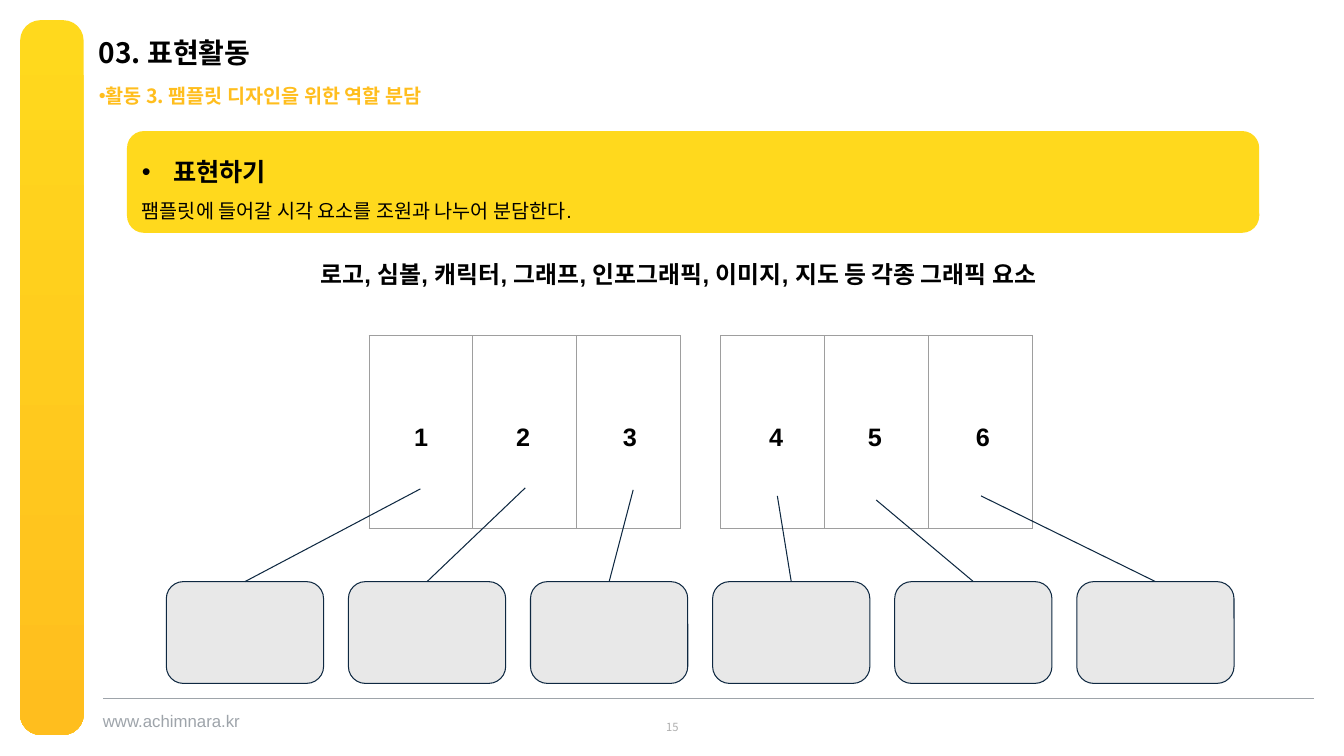
from dataclasses import dataclass

import pptx
import pptx.dml.color
import pptx.enum.shapes
import pptx.enum.text
import pptx.oxml
import pptx.oxml.ns
import pptx.util
from pptx.util import Inches

KOREAN = "Noto Sans CJK KR"
LATIN = "Arial"
YELLOW, AMBER, NAVY, BLACK = "FFD91D", "FFBE1E", "0E2841", "000000"
ALIGN = pptx.enum.text.PP_ALIGN
ANCHOR = pptx.enum.text.MSO_ANCHOR
ROUNDED = pptx.enum.shapes.MSO_SHAPE.ROUNDED_RECTANGLE


@dataclass
class Line:
    text: str
    size: float
    font: str = LATIN
    color: str = BLACK
    bold: bool = True
    spacing: float = 1.0
    bullet: bool = False
    indent: float = 0
    align: ALIGN = ALIGN.LEFT


@dataclass
class Label:
    left: float
    top: float
    width: float
    height: float
    line: Line
    margins: tuple = (0, 0)
    anchor: ANCHOR = ANCHOR.TOP


@dataclass
class Role:
    number: int
    number_left: float
    start_x: float
    start_y: float


TABLE_LEFTS = (3.66, 7.15)
COLUMN_WIDTH, TABLE_TOP, TABLE_HEIGHT = 1.03, 3.33, 1.91
BOX_LEFT, BOX_TOP, BOX_WIDTH, BOX_HEIGHT, BOX_STEP = 1.65, 5.77, 1.56, 1.01, 1.806

ROLES = [
    Role(1, 4.01, 4.17, 4.85),
    Role(2, 5.02, 5.21, 4.84),
    Role(3, 6.08, 6.28, 4.86),
    Role(4, 7.53, 7.71, 4.92),
    Role(5, 8.51, 8.69, 4.96),
    Role(6, 9.58, 9.73, 4.92),
]

LABELS = [
    Label(1.02, 7.05, 1.5, 0.2, Line("www.achimnara.kr", 12, color="9EA4AA", bold=False)),
    Label(0.98, 0.79, 7.87, 0.28,
          Line("활동 3. 팸플릿 디자인을 위한 역할 분담", 14, KOREAN, AMBER, spacing=1.2, bullet=True)),
    Label(0.98, 0.39, 7.87, 0.28, Line("03. 표현활동", 20, KOREAN, spacing=0.9)),
    Label(5.17, 7.13, 3, 0.17,
          Line("15", 8, KOREAN, "AEAEAE", bold=False, align=ALIGN.CENTER), (0.1, 0.05), ANCHOR.MIDDLE),
    Label(3.08, 2.43, 8.23, 0.92,
          Line("로고, 심볼, 캐릭터, 그래프, 인포그래픽, 이미지, 지도 등 각종 그래픽 요소", 17, spacing=1.15),
          (0.1, 0.1)),
]

BANNER = [
    Line("표현하기", 18, spacing=1.5, bullet=True, indent=0.31),
    Line("팸플릿에 들어갈 시각 요소를 조원과 나누어 분담한다.", 14, bold=False, spacing=1.5),
]


def rgb(color: str) -> pptx.dml.color.RGBColor:
    return pptx.dml.color.RGBColor.from_string(color)


def xml_element(markup: str):
    """Parse one DrawingML element, given without its namespace declaration."""
    head, mark, tail = markup.partition(">")
    slash = "/" if head.endswith("/") else ""
    declared = f"{head.removesuffix('/')} {pptx.oxml.ns.nsdecls('a')}{slash}"
    return pptx.oxml.parse_xml(declared + mark + tail)


def write_line(para, line: Line) -> None:
    if line.bullet:
        properties = para._p.get_or_add_pPr()
        properties.set("marL", str(Inches(line.indent)))
        properties.set("indent", str(Inches(-line.indent)))
        for markup in (f'<a:buClr><a:srgbClr val="{line.color}"/></a:buClr>',
                       f'<a:buFont typeface="{LATIN}"/>', '<a:buChar char="•"/>'):
            properties.append(xml_element(markup))
    para.alignment = line.align
    para.line_spacing = line.spacing
    span = para.add_run()
    span.text = line.text
    span.font.size = pptx.util.Pt(line.size)
    span.font.bold = line.bold
    span.font.color.rgb = rgb(line.color)
    span.font.name = line.font
    span._r.get_or_add_rPr().append(xml_element(f'<a:ea typeface="{KOREAN}"/>'))


def set_frame(frame, margins: tuple, anchor: ANCHOR) -> None:
    frame.word_wrap = True
    frame.margin_left = frame.margin_right = Inches(margins[0])
    frame.margin_top = frame.margin_bottom = Inches(margins[1])
    frame.vertical_anchor = anchor


def add_label(page, label: Label) -> None:
    box = page.shapes.add_textbox(Inches(label.left), Inches(label.top),
                                  Inches(label.width), Inches(label.height))
    set_frame(box.text_frame, label.margins, label.anchor)
    write_line(box.text_frame.paragraphs[0], label.line)


def add_rounded(page, left: float, top: float, width: float, height: float,
                fill: str, outline: str = "", corner: float = 0.167):
    shape = page.shapes.add_shape(ROUNDED, Inches(left), Inches(top), Inches(width), Inches(height))
    shape.shadow.inherit = False
    shape.adjustments[0] = corner
    shape.fill.solid()
    shape.fill.fore_color.rgb = rgb(fill)
    if outline:
        shape.line.color.rgb = rgb(outline)
        shape.line.width = pptx.util.Pt(0.75)
    else:
        shape.line.fill.background()
    return shape


def add_rule(page, start: tuple, end: tuple, color: str) -> None:
    rule = page.shapes.add_connector(pptx.enum.shapes.MSO_CONNECTOR.STRAIGHT,
                                     *(Inches(value) for value in start + end))
    rule.line.color.rgb = rgb(color)
    rule.line.width = pptx.util.Pt(0.75)
    rule._element.spPr.append(xml_element("<a:effectLst/>"))


def add_leaflet(page, left: float) -> None:
    """Draw one side of the three-fold pamphlet as an empty table."""
    table = page.shapes.add_table(1, 3, Inches(left), Inches(TABLE_TOP),
                                  Inches(3 * COLUMN_WIDTH), Inches(TABLE_HEIGHT)).table
    table.first_row = table.horz_banding = False
    for column in table.columns:
        column.width = Inches(COLUMN_WIDTH)
    for cell in table.iter_cells():
        properties = cell._tc.get_or_add_tcPr()
        for side in "LRTB":
            properties.append(xml_element(
                f'<a:ln{side} w="9525"><a:solidFill><a:srgbClr val="9E9E9E"/></a:solidFill></a:ln{side}>'))
        cell.fill.background()


def add_side_bar(page) -> None:
    bar = add_rounded(page, 0.2, 0.2, 0.63, 7.09, YELLOW, corner=0.321)
    bar.fill.gradient()
    bar.fill.gradient_angle = 270
    for stop, color in zip(bar.fill.gradient_stops, (YELLOW, AMBER)):
        stop.color.rgb = rgb(color)


def add_banner(page) -> None:
    frame = add_rounded(page, 1.26, 1.3, 11.23, 1.01, YELLOW).text_frame
    set_frame(frame, (0.1, 0.05), ANCHOR.MIDDLE)
    for index, line in enumerate(BANNER):
        write_line(frame.add_paragraph() if index else frame.paragraphs[0], line)


def main() -> None:
    deck = pptx.Presentation()
    deck.slide_width, deck.slide_height = Inches(13.33), Inches(7.5)
    page = deck.slides.add_slide(deck.slide_layouts[6])
    add_side_bar(page)
    add_rule(page, (13.03, 6.93), (1.02, 6.93), "9EA4AA")
    add_banner(page)
    for left in TABLE_LEFTS:
        add_leaflet(page, left)
    for index, role in enumerate(ROLES):
        left = BOX_LEFT + index * BOX_STEP
        number = Line(str(role.number), 18, spacing=1.5)
        add_label(page, Label(role.number_left, 3.93, 0.38, 0.5, number, (0.1, 0.1)))
        add_rounded(page, left, BOX_TOP, BOX_WIDTH, BOX_HEIGHT, "E8E8E8", NAVY)
        add_rule(page, (role.start_x, role.start_y), (left + BOX_WIDTH / 2, BOX_TOP), NAVY)
    for label in LABELS:
        add_label(page, label)
    deck.save("out.pptx")


if __name__ == "__main__":
    main()
